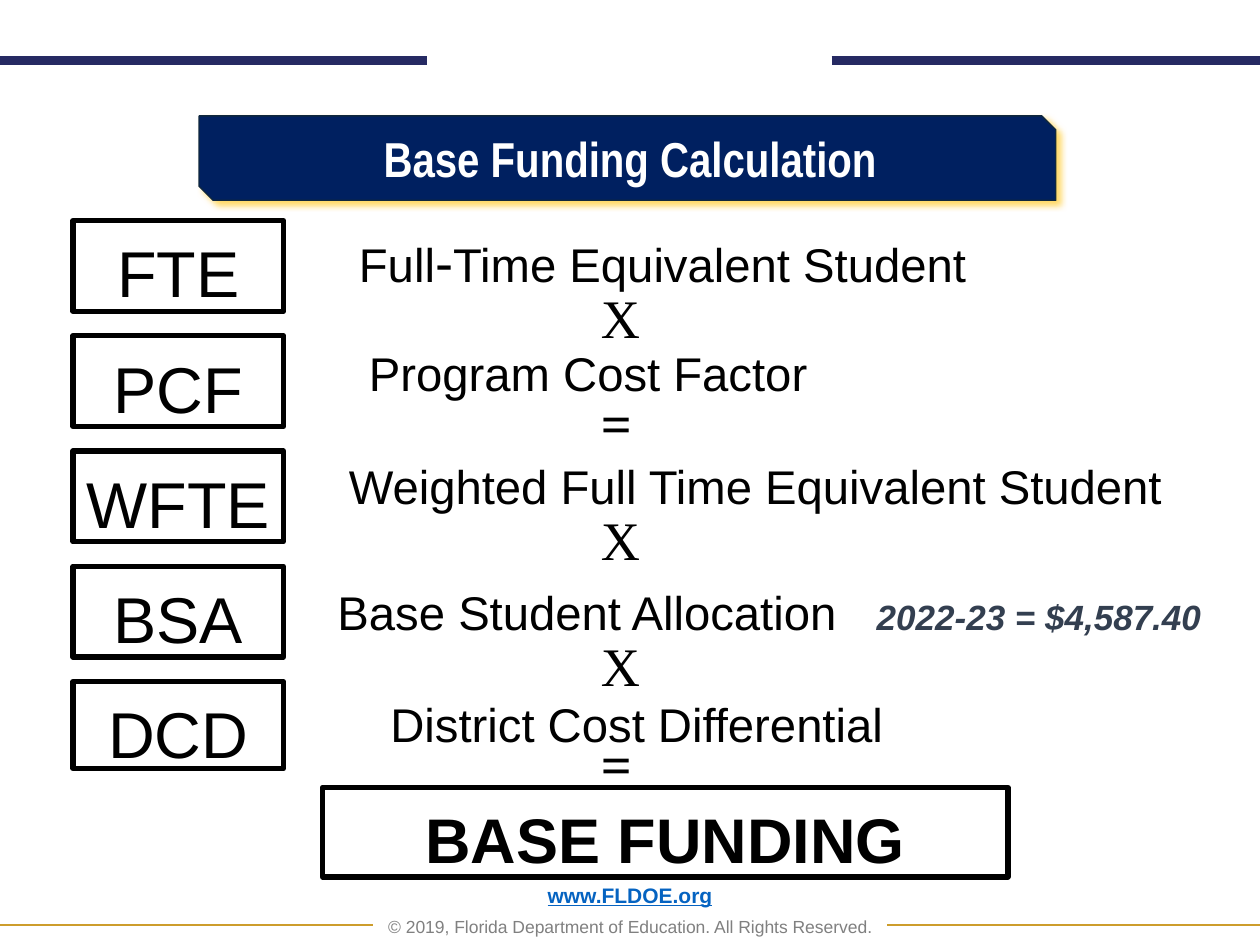
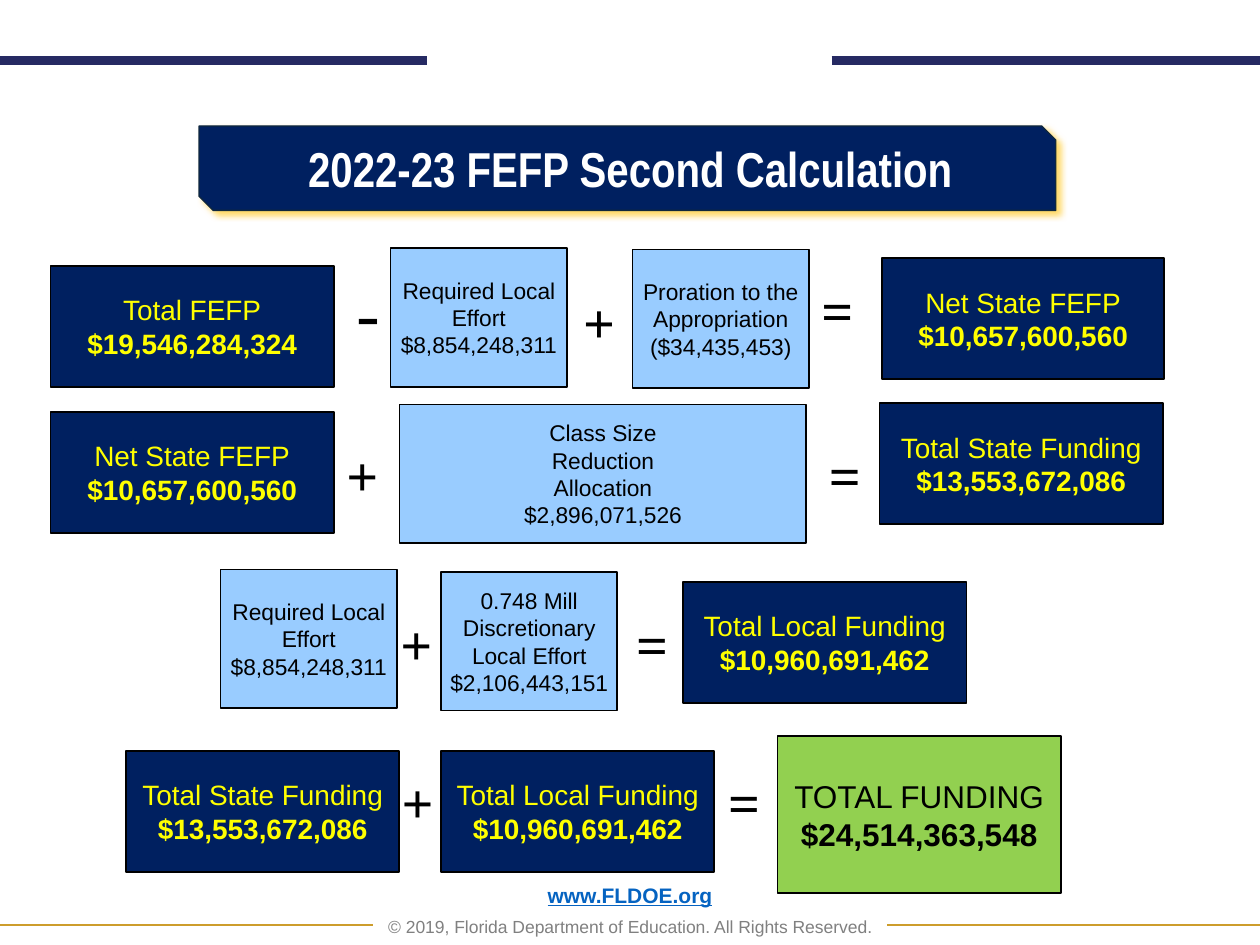
from lxml.etree import SubElement
from pptx import Presentation
from pptx.dml.color import RGBColor
from pptx.enum.shapes import MSO_CONNECTOR, MSO_SHAPE
from pptx.enum.text import MSO_ANCHOR, PP_ALIGN
from pptx.oxml.ns import qn
from pptx.util import Inches, Pt

NAVY = RGBColor(0x00, 0x20, 0x60)
BANNER_EDGE = RGBColor(0x0F, 0x27, 0x3D)
BANNER_GLOW = RGBColor(0xFF, 0xD9, 0x66)
BAND = RGBColor(0x26, 0x2A, 0x63)
GOLD = RGBColor(0xCD, 0x9D, 0x2C)
LINK = RGBColor(0x05, 0x63, 0xC1)
GRAY = RGBColor(0x80, 0x80, 0x80)
SLATE = RGBColor(0x33, 0x3F, 0x50)
SKY = RGBColor(0x99, 0xCC, 0xFF)
GREEN = RGBColor(0x92, 0xD0, 0x50)
YELLOW = RGBColor(0xFF, 0xFF, 0x00)
WHITE = RGBColor(0xFF, 0xFF, 0xFF)
BLACK = RGBColor(0x00, 0x00, 0x00)

deck = Presentation()
deck.slide_width, deck.slide_height = Inches(10), Inches(7.5)
CELL = deck.slide_width / 100  # square grid: 100 columns by 75 rows


def cells(*counts):
    return [round(count * CELL) for count in counts]


def write(slide, area, paragraphs, kind=None, fill=None, edge=None, edge_width=1,
          align=PP_ALIGN.LEFT, anchor=MSO_ANCHOR.TOP, insets=(1, 0.5, 1, 0.5),
          wrap=True, line_spacing=None, gap=0, **style):
    """Add a text box, or a shape of the given kind; paragraphs hold (text, style) runs."""
    if kind is None:
        box = slide.shapes.add_textbox(*cells(*area))
    else:
        box = slide.shapes.add_shape(kind, *cells(*area))
        box.shadow.inherit = False
        if fill is None:
            box.fill.background()
        else:
            box.fill.solid()
            box.fill.fore_color.rgb = fill
        box.line.color.rgb = edge
        box.line.width = Pt(edge_width)
    frame = box.text_frame
    frame.word_wrap = wrap
    frame.vertical_anchor = anchor
    (frame.margin_left, frame.margin_top,
     frame.margin_right, frame.margin_bottom) = cells(*insets)
    for index, runs in enumerate(paragraphs):
        para = frame.add_paragraph() if index else frame.paragraphs[0]
        para.alignment = align
        if line_spacing:
            para.line_spacing = line_spacing
        if index and gap:
            para.space_before = Pt(gap)
        for text, changes in runs:
            look = {"font": "Arial", "color": BLACK, **style, **changes}
            span = para.add_run()
            span.text = text
            span.font.name = look["font"]
            span.font.size = Pt(look["size"])
            span.font.color.rgb = look["color"]
            span.font.bold = look.get("bold", False)
            span.font.italic = look.get("italic", False)
            span.font.underline = look.get("underline", False)
    return box


# Frame shared by both slides: rules, footer and title banner
RULES = [(0, 33.9, 4.8, BAND, 5), (66, 100, 4.8, BAND, 5),
         (0, 29.6, 73.4, GOLD, 1), (70.4, 100, 73.4, GOLD, 1)]
FOOTER = [
    [("www.FLDOE.org", {"size": 12, "color": LINK, "bold": True, "underline": True})],
    [("© 2019, Florida Department of Education. All Rights Reserved.", {})],
]
pages = []
for title, banner_top in [("Base Funding Calculation", 9.2),
                          ("2022-23 FEFP Second Calculation", 10)]:
    page = deck.slides.add_slide(deck.slide_layouts[6])
    pages.append(page)
    for start, end, height, color, width in RULES:
        rule = page.shapes.add_connector(MSO_CONNECTOR.STRAIGHT,
                                         *cells(start, height, end, height))
        rule.line.color.rgb = color
        rule.line.width = Pt(width)
        SubElement(rule._element.spPr, qn("a:effectLst"))
    write(page, (6.9, 70.6, 86.2, 4.3), FOOTER, size=10, color=GRAY,
          align=PP_ALIGN.CENTER, anchor=MSO_ANCHOR.BOTTOM, insets=(1, 0, 1, 0.5),
          line_spacing=0.9, gap=6)
    banner = write(page, (15.8, banner_top, 68, 6.7), [],
                   kind=MSO_SHAPE.SNIP_2_DIAG_RECTANGLE,
                   fill=NAVY, edge=BANNER_EDGE, edge_width=0.75)
    effects = banner._element.spPr.find(qn("a:effectLst"))
    glow = SubElement(effects, qn("a:outerShdw"), blurRad=str(Pt(4)), dist=str(Pt(3)),
                      dir="2700000", algn="tl", rotWithShape="0")
    SubElement(glow, qn("a:srgbClr"), val=str(BANNER_GLOW))
    write(page, (17.5, banner_top + 0.5, 65, 5.7), [[(title, {})]], size=28,
          font="Arial Narrow", color=WHITE, bold=True, align=PP_ALIGN.CENTER,
          anchor=MSO_ANCHOR.MIDDLE)
formula_page, totals_page = pages

# Slide 1: abbreviations on the left, each factor and its operator on the right
OPERATOR = {"font": "Times New Roman", "wrap": False}
BADGE = {"kind": MSO_SHAPE.RECTANGLE, "edge": BLACK, "edge_width": 3,
         "align": PP_ALIGN.CENTER, "insets": (0.5, 1, 0.5, 0)}
FACTORS = [
    ("FTE", 7.2, 27.5, 17.1,
     [("Full", {}), ("-", {"size": 31}), ("Time Equivalent Student", {})], "X", 22.1),
    ("PCF", 7.2, 28.3, 26.3, [("Program Cost Factor", {})], "=", 30.4),
    ("WFTE", 7.2, 26.7, 35.3, [("Weighted Full Time Equivalent Student", {})], "X", 39.7),
    ("BSA", 7.2, 25.8, 45.3,
     [("Base Student Allocation\t", {}),
      ("2022-23 = $4,587.40", {"size": 20, "color": SLATE, "bold": True, "italic": True})],
     "X", 49.7),
    ("DCD", 6.9, 30, 54.2, [("District Cost Differential", {})], "=", 57.5),
]
for row, (short, height, left, top, name, sign, sign_top) in enumerate(FACTORS):
    write(formula_page, (5.8, 17.5 + 9.15 * row, 16.7, height), [[(short, {})]],
          size=37, **BADGE)
    term = write(formula_page, (left, top, 100 - left, 5.6), [name], size=27,
                 insets=(1, 1, 0, 0))
    if short == "BSA":
        tabs = SubElement(term.text_frame.paragraphs[0]._p.get_or_add_pPr(), qn("a:tabLst"))
        SubElement(tabs, qn("a:tab"), pos=str(cells(42.8)[0]), algn="l")
    write(formula_page, (46.7, sign_top, 5.2, 6.2), [[(sign, {})]], size=31,
          bold=sign == "=", **OPERATOR)
write(formula_page, (25.6, 62.5, 54.4, 7.1), [[("BASE FUNDING", {})]], size=36,
      bold=True, **BADGE)

# Slide 2: four sums made of totals, parts and operators
TOTALS = [
    (4, 21.1, 22.5, "Total FEFP", "$19,546,284,324"),
    (70, 20.5, 22.4, "Net State FEFP", "$10,657,600,560"),
    (4, 32.7, 22.5, "Net State FEFP", "$10,657,600,560"),
    (69.8, 32, 22.5, "Total State Funding", "$13,553,672,086"),
    (54.2, 46.2, 22.5, "Total Local Funding", "$10,960,691,462"),
    (10, 59.6, 21.7, "Total State Funding", "$13,553,672,086"),
    (35, 59.6, 21.7, "Total Local Funding", "$10,960,691,462"),
    (61.7, 58.4, 22.5, "TOTAL FUNDING", "$24,514,363,548"),
]
LOCAL_EFFORT = ["Required Local", "Effort", "$8,854,248,311"]
PARTS = [
    (31, 19.7, 14, LOCAL_EFFORT),
    (50.2, 19.8, 14, ["Proration to the", "Appropriation", "($34,435,453)"]),
    (31.7, 32.1, 32.3, ["Class Size", "Reduction", "Allocation", "$2,896,071,526"]),
    (17.5, 45.2, 14, LOCAL_EFFORT),
    (35, 45.4, 14, ["0.748 Mill", "Discretionary", "Local Effort", "$2,106,443,151"]),
]
SIGNS = [
    ("-", 27.3, 20.8), ("+", 45.3, 22.3), ("=", 64.2, 21.4),
    ("+", 26.5, 34.5), ("=", 64.8, 34.5),
    ("+", 30.8, 47.9), ("=", 49.5, 47.9),
    ("+", 30.9, 60.4), ("=", 56.8, 60.4),
]
CARD = {"kind": MSO_SHAPE.RECTANGLE, "edge": BLACK, "align": PP_ALIGN.CENTER,
        "anchor": MSO_ANCHOR.MIDDLE, "wrap": False}
for left, top, width, label, amount in TOTALS:
    grand = label == "TOTAL FUNDING"
    write(totals_page, (left, top, width, 12.5 if grand else 9.6),
          [[(label, {})], [(amount, {"bold": True})]],
          fill=GREEN if grand else NAVY, color=BLACK if grand else YELLOW,
          size=18 if grand else 16, **CARD)
for left, top, width, lines in PARTS:
    write(totals_page, (left, top, width, 11), [[(line, {})] for line in lines],
          fill=SKY, size=13, insets=(0, 0, 0, 0), **CARD)
for sign, left, top in SIGNS:
    minus = sign == "-"
    write(totals_page, (left, top, 6.7 if minus else 5, 6), [[(sign, {})]],
          size=40 if minus else 32, bold=not minus, **OPERATOR)

deck.save("out.pptx")
